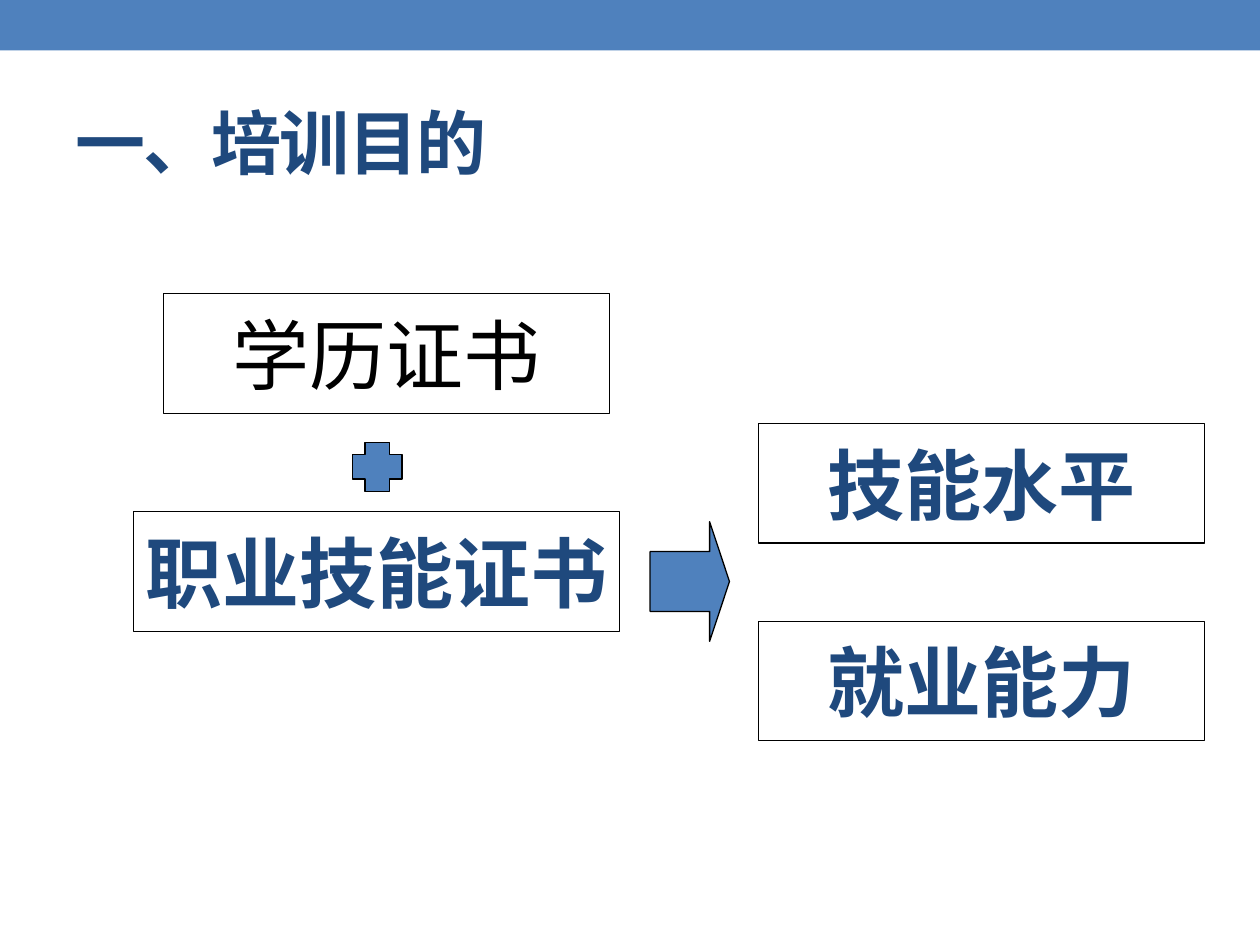
import pptx
import pptx.dml.color
import pptx.enum.shapes
import pptx.enum.text
import pptx.util

Inches = pptx.util.Inches
SHAPE = pptx.enum.shapes.MSO_SHAPE
ALIGN = pptx.enum.text.PP_ALIGN
MIDDLE = pptx.enum.text.MSO_ANCHOR.MIDDLE

COLORS = {"accent": "4F81BD", "navy": "1F497D", "black": "000000", "white": "FFFFFF"}


def rgb(name):
    return pptx.dml.color.RGBColor.from_string(COLORS[name])


class SlideBuilder:
    title_font = {"name": "Lato", "size": pptx.util.Pt(40), "bold": True}
    box_font = {"name": "Arial", "size": pptx.util.Pt(44)}
    line_width = pptx.util.Pt(0.75)
    box_height = 0.95

    def __init__(self, slide):
        self.s = slide

    def shape(self, kind, x, y, w, h, fill="accent", line="black", adj=()):
        sp = self.s.shapes.add_shape(kind, Inches(x), Inches(y), Inches(w), Inches(h))
        sp.shadow.inherit = False
        sp.fill.solid()
        sp.fill.fore_color.rgb = rgb(fill)
        if line:
            sp.line.color.rgb = rgb(line)
            sp.line.width = self.line_width
        else:
            sp.line.fill.background()
        for i, value in enumerate(adj):
            sp.adjustments[i] = value
        return sp

    def text(self, sp, text, font, color, align, wrap):
        tf = sp.text_frame
        for key, value in {"word_wrap": wrap, "vertical_anchor": MIDDLE}.items():
            setattr(tf, key, value)
        p = tf.paragraphs[0]
        p.alignment = align
        r = p.add_run()
        r.text = text
        for key, value in font.items():
            setattr(r.font, key, value)
        r.font.color.rgb = rgb(color)
        return r

    def title(self, text, x, y, w, h):
        sp = self.s.shapes.add_textbox(Inches(x), Inches(y), Inches(w), Inches(h))
        r = self.text(sp, text, self.title_font, "navy", ALIGN.LEFT, True)
        r.font._element.set("spc", "-100")  # tighten by 1 pt

    def box(self, text, x, y, w=3.54, color="navy", bold=True):
        sp = self.shape(SHAPE.RECTANGLE, x, y, w, self.box_height, fill="white")
        self.text(sp, text, {**self.box_font, "bold": bold}, color, ALIGN.CENTER, False)


def main():
    prs = pptx.Presentation()
    prs.slide_width, prs.slide_height = Inches(10), Inches(7.5)
    b = SlideBuilder(prs.slides.add_slide(prs.slide_layouts[6]))

    # Top band and title
    b.shape(SHAPE.RECTANGLE, 0, 0, 10, 0.4, line=None)
    b.title("一、培训目的", 0.5, 0.58, 9, 1.08)

    # Certificates, joined by a plus
    b.box("学历证书", 1.3, 2.33, color="black", bold=False)
    b.box("职业技能证书", 1.06, 4.06, w=3.86)
    b.shape(SHAPE.CROSS, 2.8, 3.51, 0.39, 0.39, adj=[0.25])

    # Arrow to the outcomes
    b.shape(SHAPE.RIGHT_ARROW, 5.16, 4.14, 0.63, 0.95, adj=[0.5, 0.25])
    for i, outcome in enumerate(["技能水平", "就业能力"]):
        b.box(outcome, 6.02, 3.36 + 1.57 * i)

    prs.save("out.pptx")


if __name__ == "__main__":
    main()
